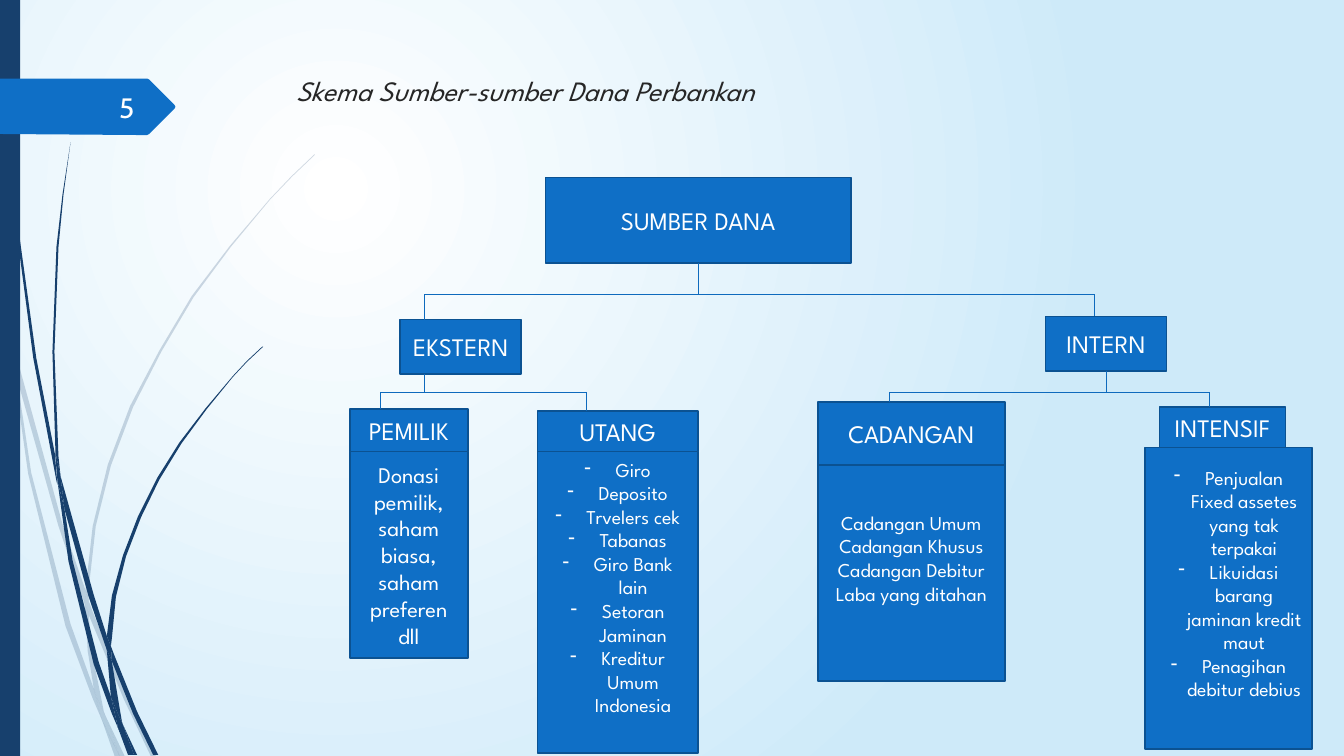
"""Builds the slide that charts where a bank's funds come from."""
import pptx
import pptx.util
import pptx.dml.color
import pptx.enum.shapes
import pptx.enum.text
import pptx.oxml.ns
import pptx.oxml.xmlchemy

Inches = pptx.util.Inches
Pt = pptx.util.Pt
ALIGN = pptx.enum.text.PP_ALIGN
ANCHOR = pptx.enum.text.MSO_ANCHOR
SHAPES = pptx.enum.shapes.MSO_SHAPE

THEME = {
    "navy": "17406D", "blue": "0F6FC6", "edge": "0B5292", "line": "0E6ABD",
    "ink": "262626", "white": "FFFFFF", "sky": "CEEAF9",
    "font": "League Spartan", "number_font": "Cabin",
    "title": 20, "heading": 18, "body": 16, "list": 14,
    "edge_width": 1.25, "line_width": 0.75,
}

TITLE = ("Skema Sumber-sumber Dana Perbankan", (2.84, 0.68, 9.75, 0.93))
PAGE_NUMBER = ("5", (0.58, 0.86, 0.85, 0.4))

HEADINGS = {
    "SUMBER DANA": (5.41, 1.76, 3.03, 0.85),
    "EKSTERN": (3.97, 3.17, 1.2, 0.54),
    "INTERN": (10.37, 3.14, 1.2, 0.54),
    "PEMILIK": (3.47, 4.06, 1.17, 0.42),
    "UTANG": (5.33, 4.08, 1.59, 0.4),
    "CADANGAN": (8.11, 3.99, 1.86, 0.62),
    "INTENSIF": (11.5, 4.04, 1.25, 0.4),
}

DETAILS = [
    {"at": (3.47, 4.48, 1.17, 2.05), "size": "body", "bullets": False, "bottom": 0.05,
     "lines": ["Donasi pemilik, saham biasa, saham preferen dll"]},
    {"at": (5.33, 4.48, 1.59, 2.99), "size": "list", "bullets": True, "bottom": 0.35,
     "lines": ["Giro", "Deposito", "Trvelers cek", "Tabanas", "Giro Bank lain",
               "Setoran Jaminan", "Kreditur Umum Indonesia"]},
    {"at": (8.11, 4.61, 1.86, 2.15), "size": "list", "bullets": False, "bottom": 0.35,
     "lines": ["Cadangan Umum", "Cadangan Khusus", "Cadangan Debitur", "Laba yang ditahan"]},
    {"at": (11.36, 4.44, 1.65, 2.99), "size": "list", "bullets": True, "bottom": 0.35,
     "lines": ["Penjualan Fixed assetes yang tak terpakai",
               "Likuidasi barang jaminan kredit maut", "Penagihan debitur debius"]},
]

BRANCHES = [
    {"parent": "SUMBER DANA", "stem": None, "bus": 2.92,
     "drops": {"EKSTERN": 4.21, "INTERN": 10.86}},
    {"parent": "EKSTERN", "stem": 4.21, "bus": 3.89,
     "drops": {"PEMILIK": 3.77, "UTANG": 5.82}},
    {"parent": "INTERN", "stem": None, "bus": 3.89,
     "drops": {"CADANGAN": 8.82, "INTENSIF": 12}},
]

PALE_STRANDS = [
    [(0.11, 3.5), (0.09, 3.22), (0, 2.82), (0, 2.99), (0.1, 3.44)],
    [(0.58, 5.22), (0.84, 5.99), (0.85, 5.86), (0.62, 5.2), (0.14, 3.45), (0.17, 3.76)],
    [(0.92, 6.07), (0.88, 5.96), (0.88, 6.1), (1.23, 6.94), (1.5, 7.51), (1.55, 7.51),
     (1.27, 6.92)],
    [(1.19, 7.51), (1.24, 7.51), (1.05, 7.11)],
    [(0.93, 6.83), (0.7, 6.19), (0.31, 4.69), (0.17, 3.76), (0.11, 3.5), (0.28, 4.7),
     (0.65, 6.21), (0.92, 6.93), (1.01, 7.14), (0.99, 7.07)],
    [(0.84, 5.99), (0.87, 6.46), (0.93, 6.83), (0.96, 6.92), (1.05, 7.11), (1.03, 7.06),
     (0.91, 6.46), (0.88, 6.1), (0.88, 6.08)],
    [(0.88, 5.84), (0.95, 5.22), (1.1, 4.62), (1.32, 4.04), (1.6, 3.49), (1.92, 2.95),
     (2.29, 2.45), (2.68, 1.98), (2.9, 1.75), (3.12, 1.54), (3.12, 1.53), (2.89, 1.75),
     (2.68, 1.97), (2.28, 2.44), (1.9, 2.94), (1.58, 3.48), (1.29, 4.03), (1.07, 4.61),
     (0.92, 5.22), (0.85, 5.84), (0.85, 5.86), (0.88, 5.96)],
    [(1.01, 7.14), (1.14, 7.51), (1.19, 7.51)],
    [(0.88, 6.08), (0.88, 6.1), (0.88, 5.96), (0.85, 5.86), (0.84, 5.99)],
    [(0.96, 6.92), (0.93, 6.83), (0.99, 7.07), (1.01, 7.14), (1.19, 7.51), (1.05, 7.11)],
]

DARK_STRANDS = [
    [(0.07, 1.1), (0.17, 2.33), (0.33, 3.55), (0.56, 4.77), (0.57, 4.81), (0.55, 4.57),
     (0.55, 4.53), (0.36, 3.55), (0.19, 2.32), (0.08, 1.09), (0.05, 0.48), (0.04, 0),
     (0.03, 0), (0.04, 0.48)],
    [(0.88, 5.92), (1.06, 6.45), (1.06, 6.33), (1.06, 6.31), (0.93, 5.9), (0.6, 4.72),
     (0.64, 5.05)],
    [(1.13, 6.49), (1.1, 6.41), (1.11, 6.56), (1.32, 7.08), (1.52, 7.49), (1.57, 7.49),
     (1.36, 7.06)],
    [(1.1, 6.91), (0.98, 6.57), (0.72, 5.56), (0.64, 5.05), (0.57, 4.77), (0.68, 5.57),
     (0.93, 6.59), (1.11, 7.08), (1.17, 7.22), (1.16, 7.17)],
    [(0.6, 4.72), (0.58, 4.53), (0.54, 3.49), (0.58, 2.45), (0.63, 1.93), (0.7, 1.41),
     (0.62, 1.93), (0.56, 2.45), (0.52, 3.49), (0.55, 4.49)],
    [(1.33, 7.49), (1.36, 7.49), (1.22, 7.19)],
    [(0.57, 4.77), (0.64, 5.05), (0.6, 4.72), (0.55, 4.49), (0.55, 4.53)],
    [(1.11, 6.33), (1.15, 5.92), (1.25, 5.52), (1.4, 5.13), (1.58, 4.76), (1.8, 4.4),
     (2.05, 4.06), (2.31, 3.74), (2.45, 3.59), (2.61, 3.44), (2.6, 3.44), (2.45, 3.58),
     (2.31, 3.73), (2.04, 4.05), (1.78, 4.39), (1.56, 4.74), (1.37, 5.12), (1.22, 5.51),
     (1.11, 5.91), (1.06, 6.31), (1.1, 6.41)],
    [(1.17, 7.22), (1.27, 7.49), (1.31, 7.49)],
    [(1.06, 6.45), (1.1, 6.91), (1.16, 7.06), (1.22, 7.19), (1.21, 7.16), (1.11, 6.56),
     (1.09, 6.51)],
    [(1.06, 6.45), (1.09, 6.51), (1.11, 6.56), (1.1, 6.41), (1.06, 6.31), (1.06, 6.33)],
    [(1.16, 7.06), (1.1, 6.91), (1.16, 7.17), (1.17, 7.22), (1.3, 7.49), (1.33, 7.49),
     (1.22, 7.19)],
]

PAGE_ARROW = [(0, 0.78), (1.46, 0.78), (1.48, 0.79), (1.73, 1.04), (1.74, 1.06),
              (1.73, 1.08), (1.48, 1.33), (1.46, 1.34), (1.36, 1.34), (0, 1.33)]


def color(name):
    return pptx.dml.color.RGBColor.from_string(THEME[name])


def add_node(parent, tag, **attributes):
    node = pptx.oxml.xmlchemy.OxmlElement(tag)
    for key, value in attributes.items():
        node.set(key, value)
    parent.append(node)
    return node


def paint(shape, fill, edge=None):
    shape.shadow.inherit = False
    shape.fill.solid()
    shape.fill.fore_color.rgb = color(fill)
    if edge:
        shape.line.color.rgb = color(edge)
        shape.line.width = Pt(THEME["edge_width"])
    else:
        shape.line.fill.background()


def paint_background(page):
    fill = page.background.fill
    fill.gradient()
    for stop, name, position in zip(fill.gradient_stops, ("white", "sky"), (0, 1)):
        stop.color.rgb = color(name)
        stop.position = position
    gradient = page.element.find(".//" + pptx.oxml.ns.qn("a:gradFill"))
    gradient.remove(gradient.find(pptx.oxml.ns.qn("a:lin")))
    center = add_node(gradient, "a:path", path="circle")
    add_node(center, "a:fillToRect", l="50000", t="50000", r="100000", b="100000")


def add_outline(page, points, fill, alpha=None):
    start, *rest = [(Inches(x), Inches(y)) for x, y in points]
    builder = page.shapes.build_freeform(*start)
    builder.add_line_segments(rest, close=True)
    outline = builder.convert_to_shape()
    paint(outline, fill)
    if alpha:
        tint = outline.element.spPr.find(".//" + pptx.oxml.ns.qn("a:srgbClr"))
        add_node(tint, "a:alpha", val=str(alpha * 1000))


def write(shape, lines, size, ink="white", font="font", align=ALIGN.CENTER,
          anchor=ANCHOR.MIDDLE, italic=None, bullets=False, bottom=0.05):
    frame = shape.text_frame
    frame.word_wrap = True
    frame.vertical_anchor = anchor
    frame.margin_bottom = Inches(bottom)
    for index, line in enumerate(lines):
        para = frame.add_paragraph() if index else frame.paragraphs[0]
        para.alignment = align
        if bullets:
            properties = para._p.get_or_add_pPr()
            properties.set("marL", str(Inches(0.31)))
            properties.set("indent", str(Inches(-0.31)))
            add_node(properties, "a:buChar", char="-")
        span = para.add_run()
        span.text = line
        span.font.name = THEME[font]
        span.font.size = Pt(THEME[size])
        span.font.italic = italic
        span.font.color.rgb = color(ink)


def add_box(page, at, lines, size, **options):
    box = page.shapes.add_shape(SHAPES.RECTANGLE, *map(Inches, at))
    paint(box, "blue", "edge")
    write(box, lines, size, **options)
    return box


def add_line(page, *ends):
    line = page.shapes.add_connector(pptx.enum.shapes.MSO_CONNECTOR.STRAIGHT, *ends)
    line.line.color.rgb = color("line")
    line.line.width = Pt(THEME["line_width"])
    add_node(line._element.spPr, "a:effectLst")
    return line


def add_branch(page, boxes, parent, stem, bus, drops):
    box = boxes[parent]
    x = Inches(stem) if stem else box.left + box.width // 2
    y = Inches(bus)
    trunk = add_line(page, x, box.top + box.height, x, y)
    if stem is None:
        trunk.begin_connect(box, 2)
    add_line(page, Inches(min(drops.values())), y, Inches(max(drops.values())), y)
    for child, drop in drops.items():
        add_line(page, Inches(drop), y, Inches(drop), boxes[child].top)


def main():
    deck = pptx.Presentation()
    deck.slide_width, deck.slide_height = Inches(13.33), Inches(7.5)
    page = deck.slides.add_slide(deck.slide_layouts[6])
    paint_background(page)
    for strands, alpha in ((PALE_STRANDS, 20), (DARK_STRANDS, None)):
        for points in strands:
            add_outline(page, points, "navy", alpha)
    band = page.shapes.add_shape(SHAPES.RECTANGLE, 0, 0, Inches(0.2), deck.slide_height)
    paint(band, "navy")
    add_outline(page, PAGE_ARROW, "blue")
    title = page.shapes.add_textbox(*map(Inches, TITLE[1]))
    write(title, [TITLE[0]], "title", ink="ink", align=ALIGN.LEFT, anchor=ANCHOR.TOP, italic=True)
    number = page.shapes.add_textbox(*map(Inches, PAGE_NUMBER[1]))
    write(number, [PAGE_NUMBER[0]], "title", font="number_font", align=ALIGN.RIGHT)
    boxes = {name: add_box(page, at, [name], "heading") for name, at in HEADINGS.items()}
    for detail in DETAILS:
        add_box(page, **detail)
    for branch in BRANCHES:
        add_branch(page, boxes, **branch)
    deck.save("out.pptx")


if __name__ == "__main__":
    main()
